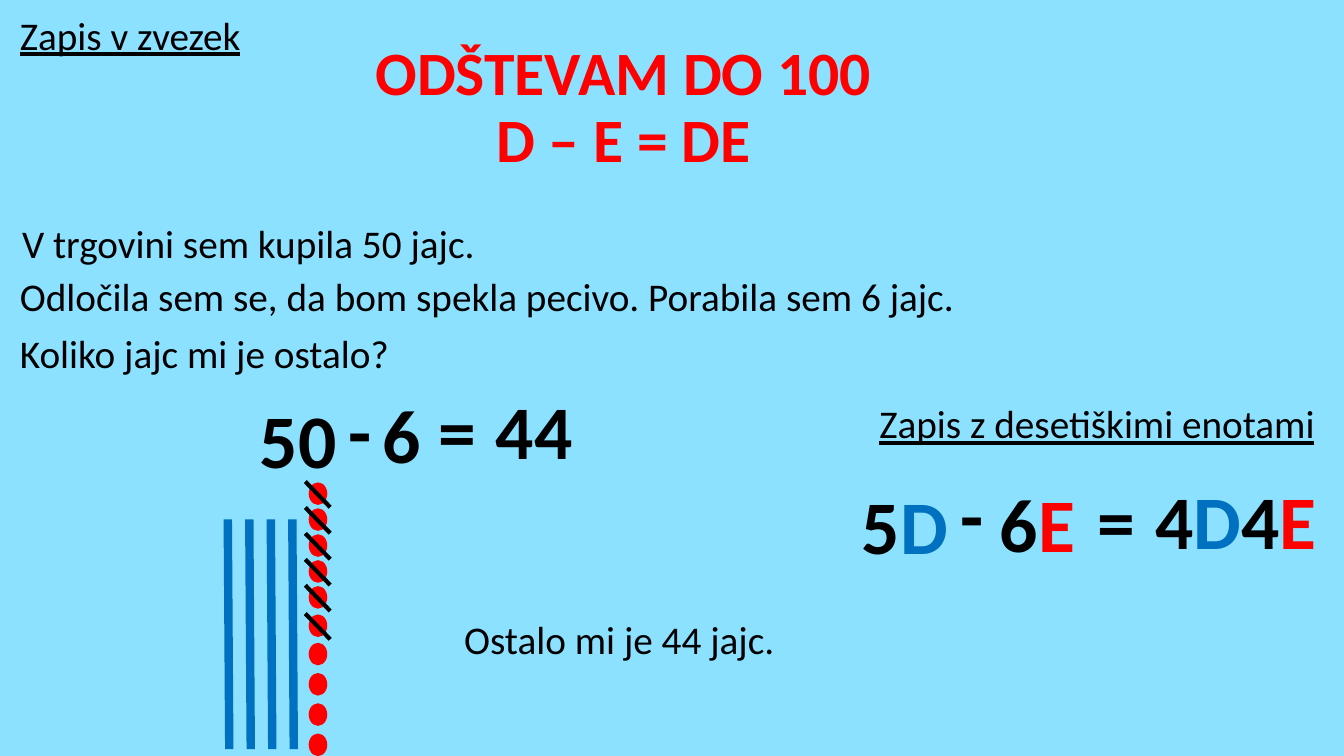
from itertools import accumulate

from lxml.etree import SubElement
from pptx import Presentation
from pptx.dml.color import RGBColor
from pptx.enum.shapes import MSO_CONNECTOR, MSO_SHAPE
from pptx.enum.text import MSO_ANCHOR, PP_ALIGN
from pptx.oxml.ns import qn
from pptx.util import Inches, Pt

SLIDE_WIDTH, SLIDE_HEIGHT = Inches(13.33), Inches(7.5)
FONT = "Calibri"
SKY = RGBColor(0x8B, 0xE1, 0xFF)
RED = RGBColor(0xFF, 0x00, 0x00)
BLUE = RGBColor(0x00, 0x70, 0xC0)
BLACK = RGBColor(0x00, 0x00, 0x00)
LETTER_COLORS = {"D": BLUE, "E": RED}  # tens and ones


# All boxes are (left, top, width, height) in percent of the slide.
def across(share):
    return round(SLIDE_WIDTH * share / 100)


def down(share):
    return round(SLIDE_HEIGHT * share / 100)


def place(box):
    left, top, width, height = box
    return across(left), down(top), across(width), down(height)


def add_text_frame(slide, box):
    text_frame = slide.shapes.add_textbox(*place(box)).text_frame
    text_frame.word_wrap = True
    return text_frame


def format_run(run, size, color=BLACK, bold=False, underline=False):
    font = run.font
    font.name, font.size, font.bold = FONT, Pt(size), bold
    font.underline = underline
    font.color.rgb = color


def add_line(slide, start, end, color, width):
    line = slide.shapes.add_connector(
        MSO_CONNECTOR.STRAIGHT,
        across(start[0]), down(start[1]), across(end[0]), down(end[1]))
    line.line.color.rgb = color
    line.line.width = Pt(width)
    SubElement(line._element.spPr, qn("a:effectLst"))


def add_title(slide, box, text):
    text_frame = add_text_frame(slide, box)
    text_frame.vertical_anchor = MSO_ANCHOR.MIDDLE
    paragraph = text_frame.paragraphs[0]
    paragraph.text = text
    paragraph.alignment = PP_ALIGN.CENTER
    paragraph.line_spacing = 0.9
    for run in paragraph.runs:
        format_run(run, 44, RED, bold=True)


def add_note(slide, box, text, underline=False):
    text_frame = add_text_frame(slide, box)
    text_frame.text = text
    for index, paragraph in enumerate(text_frame.paragraphs):
        paragraph.line_spacing = 0.9
        if index:
            paragraph.space_before = Pt(10)
        for run in paragraph.runs:
            format_run(run, 28, underline=underline)


def add_equation(slide, box, terms):
    """Each term is (text, shift right, shift down, width) within the box."""
    left, top, height = box
    for text, shift_right, shift_down, width in terms:
        text_frame = add_text_frame(
            slide, (left + shift_right, top + shift_down, width, height))
        for letter in text:
            run = text_frame.paragraphs[0].add_run()
            run.text = letter
            format_run(run, 54, LETTER_COLORS.get(letter, BLACK), bold=True)


def add_counters(slide, box, rod_count, removed_count):
    left, top, width, height = box

    # Tens as rods
    for index in range(rod_count):
        rod_left = left + 1.6 * index
        add_line(slide, (rod_left, top + 4.8),
                 (rod_left + 0.11, top + height - 0.9), BLUE, 6)

    # Ten ones as dots, the gaps widening downwards
    gaps = [3.43] * 4 + [3.75] * 2 + [4] * 3
    dot_tops = [top + shift for shift in accumulate(gaps, initial=0)]
    dot_width, dot_height = 1.28, 2.8
    dot_left = left + width - dot_width
    for dot_top in dot_tops:
        dot = slide.shapes.add_shape(
            MSO_SHAPE.OVAL, *place((dot_left, dot_top, dot_width, dot_height)))
        dot.shadow.inherit = False
        dot.fill.solid()
        dot.fill.fore_color.rgb = RED
        dot.line.color.rgb = RED
        dot.line.width = Pt(1)

    # Strokes through the ones taken away
    for dot_top in dot_tops[:removed_count]:
        add_line(slide, (dot_left - 0.3, dot_top - 0.2),
                 (dot_left + 1.55, dot_top + 3.2), BLACK, 3)


def build_slide(presentation):
    slide = presentation.slides.add_slide(presentation.slide_layouts[6])
    slide.background.fill.solid()
    slide.background.fill.fore_color.rgb = SKY

    # Heading and word problem
    add_title(slide, (22.05, 4.8, 48.7, 19.3), "ODŠTEVAM DO 100\vD – E = DE")
    add_note(slide, (0.75, 1.5, 19.9, 14.5), "Zapis v zvezek", underline=True)
    add_note(slide, (0.9, 29.1, 40.2, 14.5), "V trgovini sem kupila 50 jajc.")
    add_note(slide, (0.75, 36.1, 76.1, 14.5),
             "Odločila sem se, da bom spekla pecivo. Porabila sem 6 jajc.\n"
             "Koliko jajc mi je ostalo?")

    # Calculation with counters
    add_equation(slide, (18.6, 50.1, 13.5), [
        ("50", 0, 1.2, 8.8), ("-", 6.6, 0, 4.35), ("6", 9.15, 0.55, 4.35),
        ("=", 13.3, 0, 7), ("44", 17.55, 0, 9.2)])
    add_counters(slide, (16.95, 63.9, 7.35, 36.1), 4, 6)

    # Calculation with tens and ones
    add_note(slide, (64.7, 52.9, 35.3, 14.5), "Zapis z desetiškimi enotami",
             underline=True)
    add_equation(slide, (63.4, 61.2, 13.5), [
        ("5D", 0, 1.5, 8.8), ("-", 7.35, 0, 4.35), ("6E", 10.25, 1.2, 8.6),
        ("=", 17.5, 0.9, 7), ("4D4E", 21.8, 0.9, 14.8)])

    # Answer
    add_note(slide, (33.8, 81.5, 35.3, 14.5), "Ostalo mi je 44 jajc.")


def main():
    presentation = Presentation()
    presentation.slide_width = SLIDE_WIDTH
    presentation.slide_height = SLIDE_HEIGHT
    build_slide(presentation)
    presentation.save("out.pptx")


if __name__ == "__main__":
    main()
